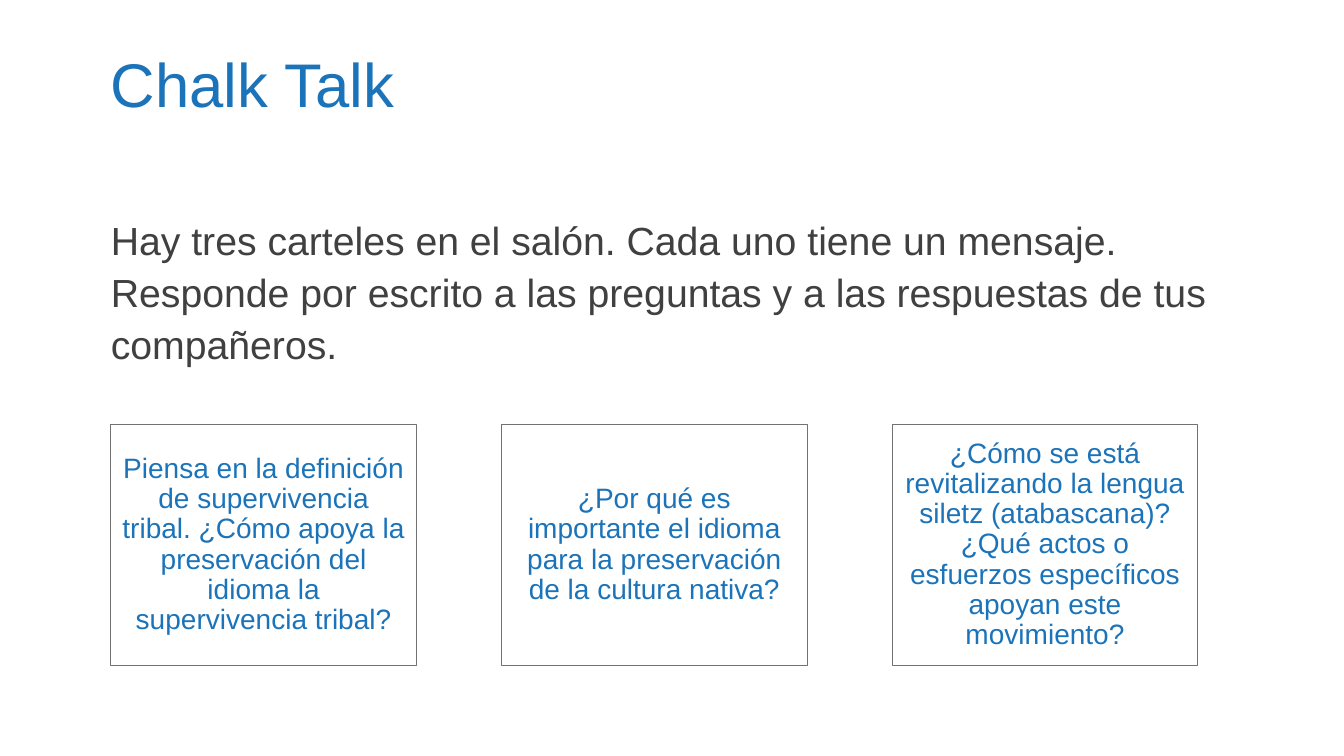
from pptx import Presentation
from pptx.dml.color import RGBColor
from pptx.enum.shapes import MSO_SHAPE
from pptx.enum.text import MSO_ANCHOR, MSO_AUTO_SIZE, PP_ALIGN
from pptx.util import Inches, Pt

BLUE = RGBColor(0x1B, 0x73, 0xB9)
DARK_GRAY = RGBColor(0x40, 0x40, 0x40)
BORDER_GRAY = RGBColor(0x76, 0x71, 0x71)
RECTANGLE = MSO_SHAPE.RECTANGLE
TOP, MIDDLE = MSO_ANCHOR.TOP, MSO_ANCHOR.MIDDLE
LEFT, CENTER = PP_ALIGN.LEFT, PP_ALIGN.CENTER
NO_AUTOFIT = MSO_AUTO_SIZE.NONE

LEFT_EDGE = 1.1
POSTER_STEP = 3.875
QUESTIONS = [
    "Piensa en la definición de supervivencia tribal. ¿Cómo apoya la "
    "preservación del idioma la supervivencia tribal?",
    "¿Por qué es importante el idioma para la preservación de la cultura nativa?",
    "¿Cómo se está revitalizando la lengua siletz (atabascana)? ¿Qué actos o "
    "esfuerzos específicos apoyan este movimiento?",
]


def write_text(shape, text, size, color, line_spacing, align=LEFT, anchor=TOP,
               margin_x=0, margin_y=0, space_after=0):
    frame = shape.text_frame
    frame.text = text
    frame.word_wrap = True
    frame.auto_size = NO_AUTOFIT
    frame.vertical_anchor = anchor
    frame.margin_left = frame.margin_right = Inches(margin_x)
    frame.margin_top = frame.margin_bottom = Inches(margin_y)
    para = frame.paragraphs[0]
    para.alignment = align
    para.line_spacing = line_spacing
    para.space_before = Pt(0)
    para.space_after = Pt(space_after)
    font = para.runs[0].font
    font.name = "Arial"
    font.size = Pt(size)
    font.color.rgb = color


deck = Presentation()
deck.slide_width = Inches(13.33)
deck.slide_height = Inches(7.5)
page = deck.slides.add_slide(deck.slide_layouts[5])

title = page.shapes.title
title.left, title.top = Inches(LEFT_EDGE), Inches(0.54)
title.width, title.height = Inches(10.78), Inches(0.71)
write_text(title, "Chalk Talk", 44, BLUE, 0.9)

instructions = page.shapes.add_textbox(
    Inches(LEFT_EDGE), Inches(2.1), Inches(10.97), Inches(1.65))
write_text(
    instructions,
    "Hay tres carteles en el salón. Cada uno tiene un mensaje. Responde por "
    "escrito a las preguntas y a las respuestas de tus compañeros.",
    28, DARK_GRAY, 1.1, space_after=12)

for index, question in enumerate(QUESTIONS):
    poster = page.shapes.add_shape(
        RECTANGLE, Inches(LEFT_EDGE + index * POSTER_STEP), Inches(4.21),
        Inches(3.03), Inches(2.39))
    poster.shadow.inherit = False
    poster.fill.background()
    poster.line.color.rgb = BORDER_GRAY
    poster.line.width = Pt(0.75)
    write_text(poster, question, 20, BLUE, 0.9, align=CENTER, anchor=MIDDLE,
               margin_x=0.1, margin_y=0.05)

deck.save("out.pptx")
